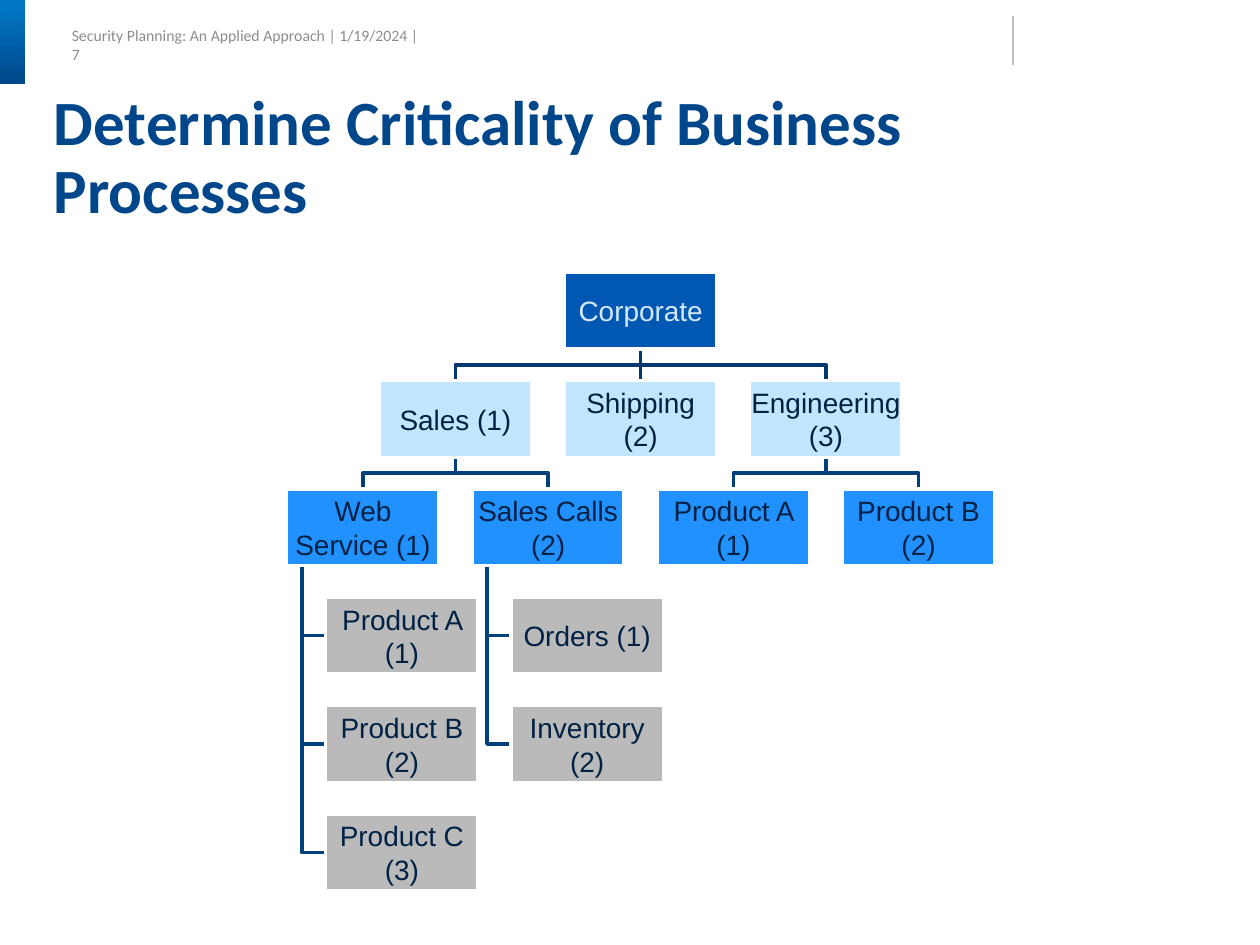
from dataclasses import dataclass, field

from lxml import etree
from pptx import Presentation
from pptx.dml.color import RGBColor
from pptx.enum.shapes import MSO_CONNECTOR, MSO_SHAPE
from pptx.enum.text import MSO_ANCHOR, PP_ALIGN
from pptx.oxml.ns import qn
from pptx.util import Inches, Pt

STRAIGHT = MSO_CONNECTOR.STRAIGHT
RECTANGLE = MSO_SHAPE.RECTANGLE
ROUNDED = MSO_SHAPE.ROUNDED_RECTANGLE
TOP, MIDDLE = MSO_ANCHOR.TOP, MSO_ANCHOR.MIDDLE
CENTER = PP_ALIGN.CENTER

WHITE = RGBColor(0xFF, 0xFF, 0xFF)
NAVY = RGBColor(0x00, 0x46, 0x8A)
ACCENT = RGBColor(0x01, 0x76, 0xC3)
HEADER_GRAY = RGBColor(0x8C, 0x8C, 0x8C)
RULE_GRAY = RGBColor(0xBF, 0xBF, 0xBF)
PALE_TEXT = RGBColor(0xD3, 0xE9, 0xFF)
DARK_TEXT = RGBColor(0x00, 0x21, 0x43)
UPPER_LINK = RGBColor(0x00, 0x38, 0x6F)
LOWER_LINK = RGBColor(0x00, 0x40, 0x7D)
LEVEL_FILLS = [
    RGBColor(0x00, 0x58, 0xB2),
    RGBColor(0xC1, 0xE6, 0xFF),
    RGBColor(0x20, 0x91, 0xFF),
    RGBColor(0xBA, 0xBA, 0xBA),
]

BOX_WIDTH, BOX_HEIGHT = 1.21, 0.61
ROOT_LEFT, ROOT_TOP = 4.48, 2.16
COLUMN_PITCH, ROW_PITCH = 1.47, 0.86
LEAF_INDENT, TRUNK_INDENT = 0.31, 0.12
LEAF_LEVEL = 3


@dataclass
class Unit:
    label: str
    column: float
    children: list = field(default_factory=list)
    level: int = 0

    def arrange(self, level=0, row=0):
        self.level = level
        self.left = ROOT_LEFT + self.column * COLUMN_PITCH
        self.top = ROOT_TOP + row * ROW_PITCH
        if level == LEAF_LEVEL:
            self.left += LEAF_INDENT
        for index, child in enumerate(self.children):
            stacked = index if level + 1 == LEAF_LEVEL else 0
            child.arrange(level + 1, row + 1 + stacked)

    def descend(self):
        yield self
        for child in self.children:
            yield from child.descend()


def leaves(column, *labels):
    return [Unit(label, column) for label in labels]


CORPORATE = Unit("Corporate", 0, [
    Unit("Sales (1)", -1, [
        Unit("Web Service (1)", -1.5,
             leaves(-1.5, "Product A (1)", "Product B (2)", "Product C (3)")),
        Unit("Sales Calls (2)", -0.5,
             leaves(-0.5, "Orders (1)", "Inventory (2)")),
    ]),
    Unit("Shipping (2)", 0),
    Unit("Engineering (3)", 1, [
        Unit("Product A (1)", 0.5),
        Unit("Product B (2)", 1.5),
    ]),
])


class SlideBuilder:
    heading_font = "Calibri"
    chart_font = "Arial"

    def __init__(self, slide):
        self.shapes = slide.shapes

    def fill_text(self, frame, text, font, size, color, anchor, inset=(0, 0)):
        frame.vertical_anchor = anchor
        frame.margin_left = frame.margin_right = Inches(inset[0])
        frame.margin_top = frame.margin_bottom = Inches(inset[1])
        paragraph = frame.paragraphs[0]
        paragraph.text = text
        paragraph.font.name = font
        paragraph.font.size = Pt(size)
        paragraph.font.color.rgb = color
        return paragraph

    def text(self, bounds, text, size, color, anchor, inset=(0, 0), wrap=True):
        frame = self.shapes.add_textbox(*map(Inches, bounds)).text_frame
        frame.word_wrap = wrap
        return self.fill_text(frame, text, self.heading_font, size, color, anchor, inset)

    def gradient_tab(self, bounds, start, end):
        tab = self.shapes.add_shape(ROUNDED, *map(Inches, bounds))
        tab.adjustments[0] = 0
        tab.shadow.inherit = False
        tab.line.fill.background()
        tab.fill.gradient()
        tab.fill.gradient_angle = 270
        for stop, color, position in zip(tab.fill.gradient_stops, (start, end), (0.1, 1)):
            stop.color.rgb = color
            stop.position = position

    def line(self, start, end, color, weight):
        line = self.shapes.add_connector(STRAIGHT, *map(Inches, start + end))
        line.line.color.rgb = color
        line.line.width = Pt(weight)
        etree.SubElement(line._element.spPr, qn("a:effectLst"))

    def bent_line(self, points, color, weight):
        start, *rest = [(Inches(x), Inches(y)) for x, y in points]
        builder = self.shapes.build_freeform(*start)
        builder.add_line_segments(rest, close=False)
        bend = builder.convert_to_shape()
        bend.shadow.inherit = False
        bend.fill.background()
        bend.line.color.rgb = color
        bend.line.width = Pt(weight)

    def link(self, parent, child):
        color = LOWER_LINK if parent.level else UPPER_LINK
        bottom = parent.top + BOX_HEIGHT
        if child.level == LEAF_LEVEL:
            trunk = parent.left + TRUNK_INDENT
            middle = child.top + BOX_HEIGHT / 2
            points = [(trunk, bottom), (trunk, middle), (child.left, middle)]
            self.bent_line(points, color, 2)
            return
        start = (parent.left + BOX_WIDTH / 2, bottom)
        end = (child.left + BOX_WIDTH / 2, child.top)
        if child.column == parent.column:
            self.line(start, end, color, 2)
            return
        bend = (bottom + child.top) / 2
        self.bent_line([start, (start[0], bend), (end[0], bend), end], color, 2)

    def unit_box(self, unit):
        bounds = (unit.left, unit.top, BOX_WIDTH, BOX_HEIGHT)
        box = self.shapes.add_shape(RECTANGLE, *map(Inches, bounds))
        box.shadow.inherit = False
        box.fill.solid()
        box.fill.fore_color.rgb = LEVEL_FILLS[unit.level]
        box.line.color.rgb = WHITE
        box.line.width = Pt(2)
        box.text_frame.word_wrap = True
        color = DARK_TEXT if unit.level else PALE_TEXT
        label = self.fill_text(box.text_frame, unit.label, self.chart_font, 16, color,
                               MIDDLE, (0.01, 0.01))
        label.alignment = CENTER

    def hierarchy(self, root):
        root.arrange()
        units = list(root.descend())
        for parent in units:
            for child in parent.children:
                self.link(parent, child)
        for unit in units:
            self.unit_box(unit)


def main():
    presentation = Presentation()
    presentation.slide_width = Inches(10)
    presentation.slide_height = Inches(7.5)
    builder = SlideBuilder(presentation.slides.add_slide(presentation.slide_layouts[6]))

    builder.text((0.57, 0.24, 2.84, 0.23),
                 "Security Planning: An Applied Approach | 1/19/2024 | 7",
                 9, HEADER_GRAY, MIDDLE, wrap=False)
    builder.gradient_tab((0, 0, 0.2, 0.67), ACCENT, NAVY)
    builder.line((8.04, 0.13), (8.04, 0.52), RULE_GRAY, 0.75)
    title = builder.text((0.33, 0.67, 9, 1.02),
                         "Determine Criticality of Business Processes",
                         36, NAVY, TOP, (0.1, 0.05))
    title.font.bold = True
    title.line_spacing = 0.9
    builder.hierarchy(CORPORATE)

    presentation.save("out.pptx")


if __name__ == "__main__":
    main()
